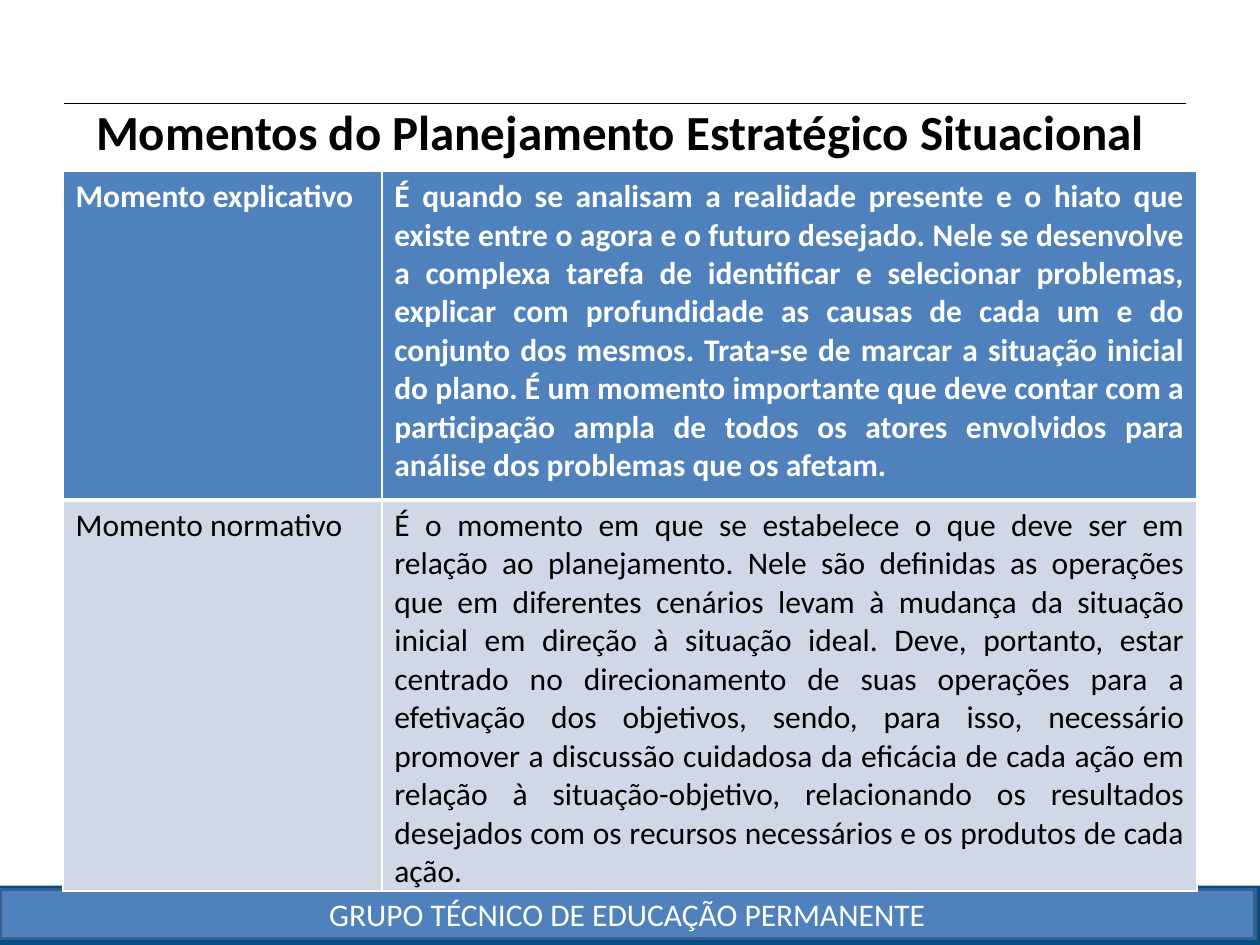
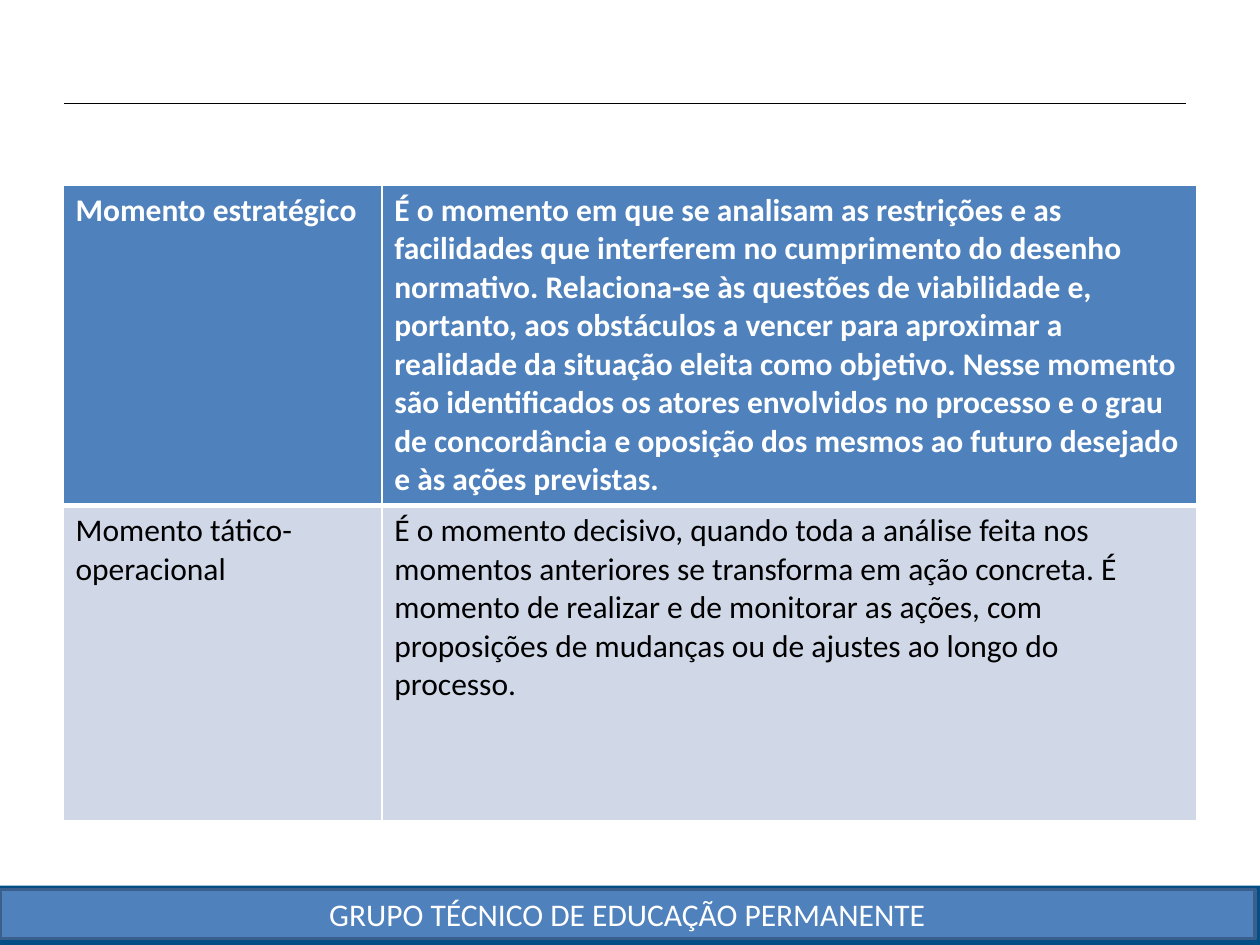
from dataclasses import dataclass

from lxml import etree
from pptx import Presentation
from pptx import util as u
from pptx.dml.color import RGBColor
from pptx.enum import shapes, text
from pptx.oxml import ns

PX = 9144


@dataclass(frozen=True)
class Theme:
    font: str = "Calibri"
    white: str = "FFFFFF"
    black: str = "000000"
    navy: str = "034E84"
    blue: str = "4F81BD"
    edge: str = "3A5F8C"
    pale: str = "D0D8E8"
    title: int = 28
    body: int = 18


class Deck:
    """Holds the theme and the current slide, and draws each kind of element."""

    def __init__(self, theme):
        self.theme = theme
        self.prs = Presentation()
        self.prs.slide_width = 1000 * PX
        self.prs.slide_height = 750 * PX
        self.slide = None

    def start(self):
        t = self.theme
        self.slide = self.prs.slides.add_slide(self.prs.slide_layouts[6])
        self.band((0, 703, 1000, 47), t.navy)
        self.rule(51, 82, 941)
        bar = self.band((0, 706, 996, 39), t.blue, t.edge)
        bar.text_frame.vertical_anchor = text.MSO_ANCHOR.MIDDLE
        self.label(bar.text_frame, "GRUPO TÉCNICO DE EDUCAÇÃO PERMANENTE",
                   t.body, t.white, align=text.PP_ALIGN.CENTER)

    def band(self, box, fill, edge=None):
        kind = shapes.MSO_SHAPE.RECTANGLE
        band = self.slide.shapes.add_shape(kind, *(n * PX for n in box))
        band.shadow.inherit = False
        band.fill.solid()
        band.fill.fore_color.rgb = RGBColor.from_string(fill)
        if edge:
            band.line.color.rgb = RGBColor.from_string(edge)
            band.line.width = u.Pt(2)
        else:
            band.line.fill.background()
        return band

    def rule(self, left, top, right):
        line = self.slide.shapes.add_connector(
            shapes.MSO_CONNECTOR.STRAIGHT, left * PX, top * PX, right * PX, top * PX)
        line.line.color.rgb = RGBColor.from_string(self.theme.black)
        line.line.width = u.Pt(0.75)
        etree.SubElement(line._element.spPr, ns.qn("a:effectLst"))

    def label(self, frame, words, size, color, bold=False, align=text.PP_ALIGN.LEFT):
        frame.word_wrap = True
        para = frame.paragraphs[0]
        para.alignment = align
        run = para.add_run()
        run.text = words
        font = run.font
        font.name, font.size, font.bold = self.theme.font, u.Pt(size), bold
        font.color.rgb = RGBColor.from_string(color)

    def title(self, words):
        box = self.slide.shapes.add_textbox(51 * PX, 76 * PX, 882 * PX, 57 * PX)
        self.label(box.text_frame, words, self.theme.title, self.theme.black,
                   bold=True, align=text.PP_ALIGN.CENTER)
        box.text_frame.auto_size = text.MSO_AUTO_SIZE.SHAPE_TO_FIT_TEXT

    def border(self, cell, widths):
        props = cell._tc.get_or_add_tcPr()
        for spot, (side, width) in enumerate(zip("LRTB", widths)):
            line = etree.Element(ns.qn(f"a:ln{side}"), w=str(u.Pt(width)))
            fill = etree.SubElement(line, ns.qn("a:solidFill"))
            etree.SubElement(fill, ns.qn("a:srgbClr"), val=self.theme.white)
            props.insert(spot, line)

    def table(self, top, highs, rows, align=text.PP_ALIGN.LEFT):
        t = self.theme
        wides = (253, 647)
        grid = self.slide.shapes.add_table(
            len(rows), len(wides), 50 * PX, top * PX, sum(wides) * PX, sum(highs) * PX).table
        grid.horz_banding = False
        for col, wide in zip(grid.columns, wides):
            col.width = wide * PX
        looks = ((t.blue, t.white, True, (1, 1, 1, 3)),
                 (t.pale, t.black, False, (1, 1, 3, 1)))
        for r, (row, high, look) in enumerate(zip(rows, highs, looks)):
            fill, ink, bold, edges = look
            grid.rows[r].height = high * PX
            for c, words in enumerate(row):
                cell = grid.cell(r, c)
                cell.fill.solid()
                cell.fill.fore_color.rgb = RGBColor.from_string(fill)
                self.border(cell, edges)
                side = align if c else text.PP_ALIGN.LEFT
                self.label(cell.text_frame, words, t.body, ink, bold, side)


def main():
    deck = Deck(Theme())

    deck.start()
    deck.title("Momentos do Planejamento Estratégico Situacional")
    deck.table(136, (261, 292), (
        ("Momento explicativo",
         "É quando se analisam a realidade presente e o hiato que existe entre o agora "
         "e o futuro desejado. Nele se desenvolve a complexa tarefa de identificar e "
         "selecionar problemas, explicar com profundidade as causas de cada um e do "
         "conjunto dos mesmos. Trata-se de marcar a situação inicial do plano. É um "
         "momento importante que deve contar com a participação ampla de todos os "
         "atores envolvidos para análise dos problemas que os afetam."),
        ("Momento normativo",
         "É o momento em que se estabelece o que deve ser em relação ao planejamento. "
         "Nele são definidas as operações que em diferentes cenários levam à mudança "
         "da situação inicial em direção à situação ideal. Deve, portanto, estar "
         "centrado no direcionamento de suas operações para a efetivação dos "
         "objetivos, sendo, para isso, necessário promover a discussão cuidadosa da "
         "eficácia de cada ação em relação à situação-objetivo, relacionando os "
         "resultados desejados com os recursos necessários e os produtos de cada ação."),
    ), text.PP_ALIGN.JUSTIFY)

    deck.start()
    deck.table(147, (254, 250), (
        ("Momento estratégico",
         "É o momento em que se analisam as restrições e as facilidades que interferem "
         "no cumprimento do desenho normativo. Relaciona-se às questões de viabilidade "
         "e, portanto, aos obstáculos a vencer para aproximar a realidade da situação "
         "eleita como objetivo. Nesse momento são identificados os atores envolvidos "
         "no processo e o grau de concordância e oposição dos mesmos ao futuro "
         "desejado e às ações previstas."),
        ("Momento tático-operacional",
         "É o momento decisivo, quando toda a análise feita nos momentos anteriores se "
         "transforma em ação concreta. É momento de realizar e de monitorar as ações, "
         "com proposições de mudanças ou de ajustes ao longo do processo."),
    ))

    deck.prs.save("out.pptx")


if __name__ == "__main__":
    main()
